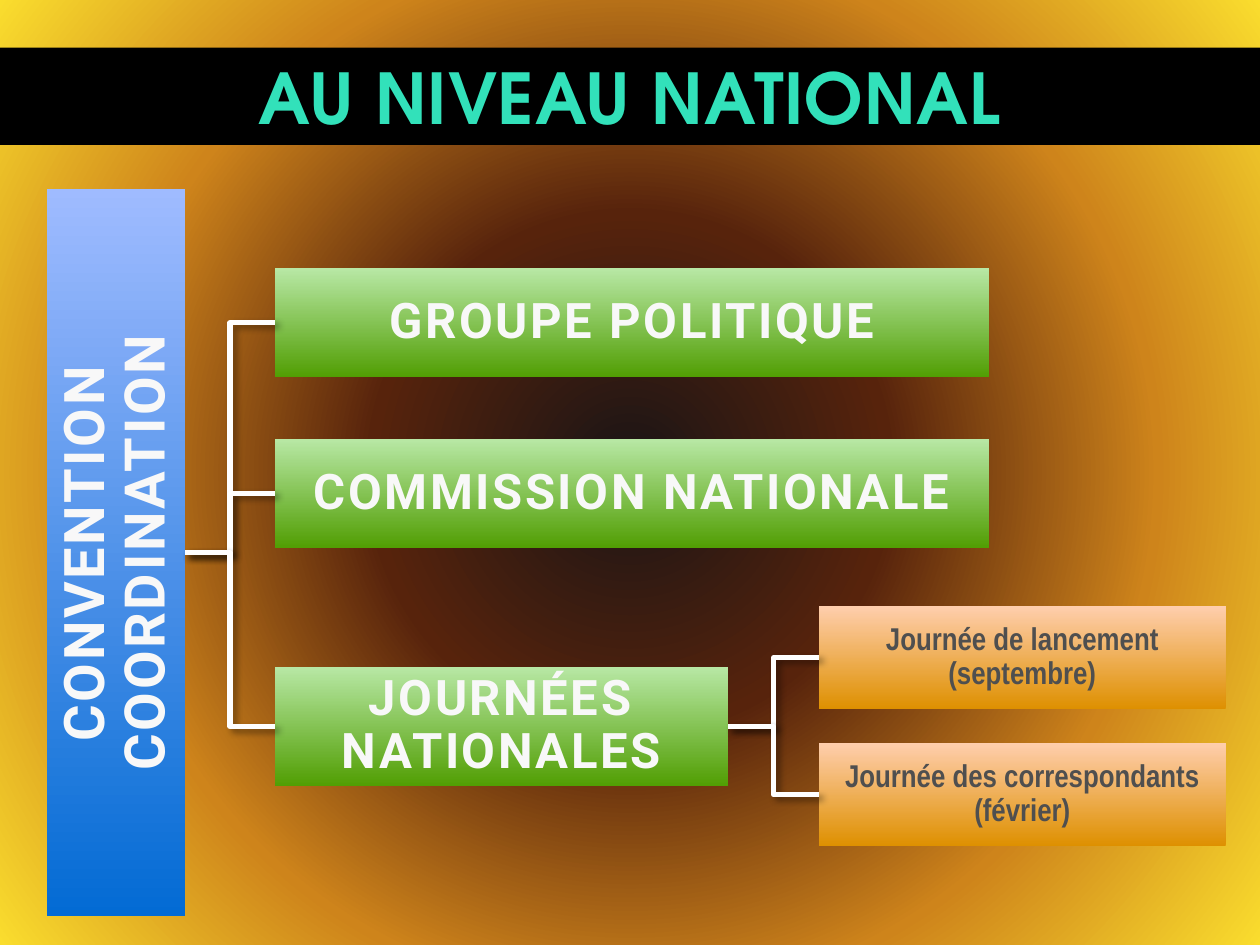
from lxml import etree
from pptx import Presentation
from pptx import util as u
from pptx.dml.color import RGBColor
from pptx.enum import shapes, text
from pptx.oxml import parse_xml
from pptx.oxml.ns import nsdecls, qn

HUES = {
    "black": "000000", "white": "FFFFFF", "mint": "32E1BA",
    "pale": "F8F8F8", "gray": "4F4F4F",
}
# Gradients run from bottom to top
FADES = {
    "blue": ("036BD4", "9FBBFF"),
    "green": ("519E03", "B8E8A5"),
    "orange": ("DE9000", "FFCEAD"),
}
GLOW = {0: "191416", 33: "57230C", 67: "CE841B", 100: "FADD2E"}


def rgb(name):
    return RGBColor.from_string(HUES[name])


class Deck:
    """Holds the style and the current slide."""

    def __init__(self):
        self.prs = Presentation()
        self.prs.slide_width, self.prs.slide_height = u.Cm(25.4), u.Cm(19.05)
        self.slide = self.prs.slides.add_slide(self.prs.slide_layouts[6])

    def glow(self, stops):
        """Round gradient behind the whole slide."""
        self.slide.background.fill.gradient()
        old = self.slide.element.find(".//" + qn("a:gradFill"))
        marks = "".join(
            f'<a:gs pos="{pos * 1000}"><a:srgbClr val="{hue}"/></a:gs>'
            for pos, hue in stops.items())
        new = parse_xml(
            f'<a:gradFill {nsdecls("a")} rotWithShape="1"><a:gsLst>{marks}</a:gsLst>'
            '<a:path path="circle"><a:fillToRect l="50000" t="50000" '
            'r="50000" b="50000"/></a:path></a:gradFill>')
        old.getparent().replace(old, new)

    def rect(self, x, y, w, h):
        box = self.slide.shapes.add_shape(
            shapes.MSO_SHAPE.RECTANGLE, u.Cm(x), u.Cm(y), u.Cm(w), u.Cm(h))
        box.shadow.inherit = False
        box.line.fill.background()
        return box

    def label(self, box, words, face, size, hue, gap=0):
        """Centred bold text, with letter gap in points."""
        frame = box.text_frame
        frame.word_wrap = True
        frame.vertical_anchor = text.MSO_ANCHOR.MIDDLE
        para = frame.paragraphs[0]
        para.text = words
        para.alignment = text.PP_ALIGN.CENTER
        font = para.font
        font.name, font.size, font.bold = face, u.Pt(size), True
        font.color.rgb = rgb(hue)
        box.element.find(".//" + qn("a:defRPr")).set("spc", str(int(gap * 100)))
        return para

    def title(self, words, y, h):
        bar = self.rect(0, y, 25.4, h)
        bar.fill.solid()
        bar.fill.fore_color.rgb = rgb("black")
        self.label(bar, words, "TeX Gyre Adventor", 40, "mint", 0.5)

    def node(self, words, place, fade, face="Roboto", size=28, hue="pale",
             gap=1.5, inset=0.05):
        """Box of the tree."""
        box = self.rect(*place)
        box.fill.gradient()
        box.fill.gradient_angle = 90
        for stop, tint in zip(box.fill.gradient_stops, FADES[fade]):
            stop.color.rgb = RGBColor.from_string(tint)
        frame = box.text_frame
        frame.margin_left = frame.margin_right = u.Cm(inset)
        frame.margin_top = frame.margin_bottom = u.Cm(inset)
        self.label(box, words, face, size, hue, gap).line_spacing = 0.9
        return box

    def leaf(self, words, place):
        return self.node(words, place, "orange", "Arial Narrow", 18, "gray", 0, 0.03)

    def link(self, start, end):
        """Elbow from the right side of one box to the left side of another."""
        line = self.slide.shapes.add_connector(
            shapes.MSO_CONNECTOR.ELBOW, 0, 0, 0, 0)
        line.begin_connect(start, 3)
        line.end_connect(end, 1)
        line.line.color.rgb = rgb("white")
        line.line.width = u.Pt(3)
        props = line.element.spPr
        fx = etree.SubElement(props, qn("a:effectLst"))
        drop = etree.SubElement(
            fx, qn("a:outerShdw"), blurRad=str(u.Pt(4)), dist=str(u.Pt(3)),
            dir="2700000", rotWithShape="0")
        tone = etree.SubElement(drop, qn("a:srgbClr"), val=HUES["black"])
        etree.SubElement(tone, qn("a:alpha"), val="40000")


def main():
    deck = Deck()
    deck.glow(GLOW)
    deck.title("AU NIVEAU NATIONAL", 0.96, 1.96)

    # Root, with text that reads upwards
    root = deck.node("CONVENTION COORDINATION", (0.95, 3.81, 2.79, 14.66),
                     "blue", size=32)
    root.element.find(".//" + qn("a:bodyPr")).set("vert", "vert270")

    # National bodies
    bodies = [deck.node(words, (5.54, y, w, h), "green") for words, y, w, h in (
        ("GROUPE POLITIQUE", 5.41, 14.4, 2.2),
        ("COMMISSION NATIONALE", 8.85, 14.4, 2.2),
        ("JOURNÉES NATIONALES", 13.44, 9.14, 2.41))]

    # National days
    days = [deck.leaf(words, (16.51, y, 8.2, 2.08)) for words, y in (
        ("Journée de lancement (septembre)", 12.22),
        ("Journée des correspondants (février)", 14.98))]

    # Branches
    for body in bodies:
        deck.link(root, body)
    for day in days:
        deck.link(bodies[-1], day)

    deck.prs.save("out.pptx")


if __name__ == "__main__":
    main()
